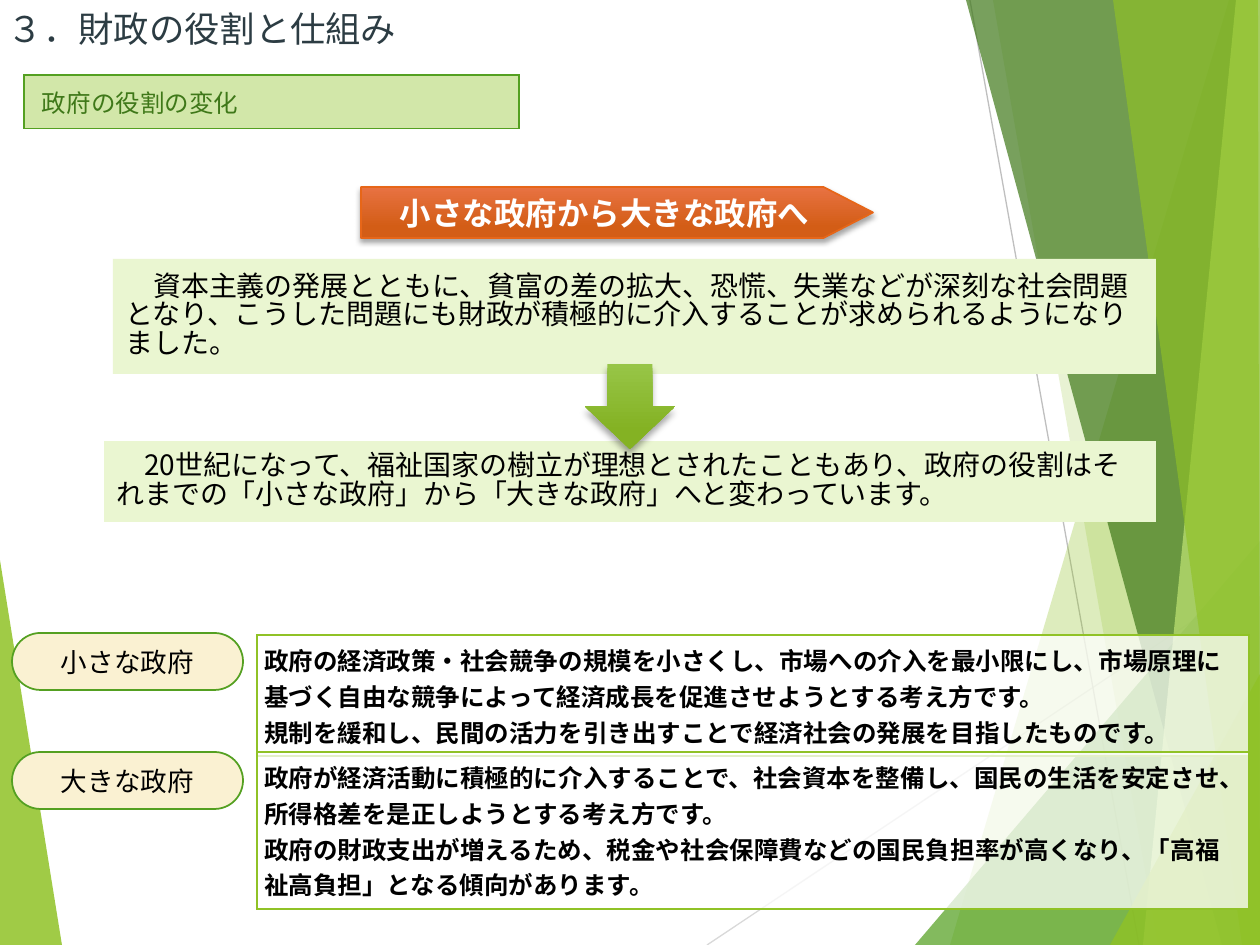
from dataclasses import dataclass
from typing import Optional

from lxml import etree
from pptx import Presentation
from pptx.dml.color import RGBColor
from pptx.enum.shapes import MSO_CONNECTOR, MSO_SHAPE
from pptx.enum.text import MSO_ANCHOR, PP_ALIGN
from pptx.oxml.ns import qn
from pptx.util import Emu, Pt

EMU_PER_PX = 914400 / 126
WIDTH, HEIGHT = 1260, 945
FONT = "Noto Sans CJK JP"
LEFT, CENTER = PP_ALIGN.LEFT, PP_ALIGN.CENTER
TOP, MIDDLE = MSO_ANCHOR.TOP, MSO_ANCHOR.MIDDLE
RECT, PILL = MSO_SHAPE.RECTANGLE, MSO_SHAPE.ROUNDED_RECTANGLE
PENTAGON, DOWN_ARROW = MSO_SHAPE.PENTAGON, MSO_SHAPE.DOWN_ARROW
STRAIGHT = MSO_CONNECTOR.STRAIGHT

COLORS = {
    "black": "000000", "white": "FFFFFF", "title": "2C3C43",
    "lime": "90C226", "green": "54A021", "forest": "3F7819", "pale_lime": "C0E474",
    "heading": "D2E7A9", "panel": "EAF6D1", "cream": "FAF1D2",
    "orange": "E76618", "orange_top": "E87242", "orange_bottom": "D35D16",
    "arrow_top": "97C547", "arrow_bottom": "84B223",
    "grey": "BFBFBF", "light_grey": "D9D9D9",
}


@dataclass(frozen=True)
class Facet:
    points: tuple[tuple[int, int], ...]
    color: str
    opacity: int


@dataclass(frozen=True)
class Ray:
    start: tuple[int, int]
    end: tuple[int, int]
    color: str


@dataclass(frozen=True)
class TextStyle:
    size: float
    color: str = "black"
    bold: bool = False
    align: PP_ALIGN = LEFT
    spacing: Optional[float] = None


@dataclass(frozen=True)
class Box:
    kind: MSO_SHAPE
    area: tuple[int, int, int, int]
    fill: tuple[str, ...]  # two colours make a vertical gradient
    text: str = ""
    style: TextStyle = TextStyle(16)
    line: Optional[str] = None
    adjust: Optional[float] = None
    shadow: Optional[tuple[int, int]] = None  # blur and distance in points


@dataclass(frozen=True)
class Frame:
    area: tuple[int, int, int, int]
    paragraphs: tuple[str, ...]
    style: TextStyle
    fill: str
    border: str
    margins: tuple[int, int]  # horizontal, vertical
    anchor: MSO_ANCHOR
    opacity: int = 100


BOTTOM_RIGHT, TOP_RIGHT = (WIDTH, HEIGHT), (WIDTH, 0)
FACETS_BEHIND = [Facet(((0, 560), (62, HEIGHT), (0, HEIGHT)), "lime", 85)]
RAYS = [
    Ray((707, HEIGHT), (WIDTH, 576), "light_grey"),
    Ray((970, 0), (1139, HEIGHT), "grey"),
]
FACETS = [
    Facet(((1229, 0), (950, HEIGHT), BOTTOM_RIGHT, TOP_RIGHT), "lime", 30),
    Facet(((993, 0), (1158, HEIGHT), BOTTOM_RIGHT, TOP_RIGHT), "lime", 20),
    Facet(((915, HEIGHT), (WIDTH, 541), BOTTOM_RIGHT), "green", 72),
    Facet(((966, 0), (1222, HEIGHT), BOTTOM_RIGHT, TOP_RIGHT), "forest", 70),
    Facet(((1236, 0), (1143, HEIGHT), BOTTOM_RIGHT, TOP_RIGHT), "pale_lime", 70),
    Facet(((1113, 0), (1242, HEIGHT), BOTTOM_RIGHT, (1258, 0)), "lime", 65),
    Facet(((1110, HEIGHT), (WIDTH, 674), BOTTOM_RIGHT), "lime", 80),
]

TITLE = TextStyle(20.2, "title")
BODY = TextStyle(16, spacing=0.84)
TERM = TextStyle(15.2, align=CENTER)
DEFINITION = TextStyle(14, bold=True)
FRAMES = [
    Frame((24, 75, 495, 50), ("政府の役割の変化",), TextStyle(14, "forest"),
          "heading", "green", (18, 9), TOP),
    Frame((257, 635, 992, 110), (
        "政府の経済政策・社会競争の規模を小さくし、市場への介入を最小限にし、市場原理に基づく自由な競争によって経済成長を促進させようとする考え方です。",
        "規制を緩和し、民間の活力を引き出すことで経済社会の発展を目指したものです。",
    ), DEFINITION, "white", "lime", (7, 7), MIDDLE, 75),
    Frame((257, 752, 992, 141), (
        "政府が経済活動に積極的に介入することで、社会資本を整備し、国民の生活を安定させ、所得格差を是正しようとする考え方です。",
        "政府の財政支出が増えるため、税金や社会保障費などの国民負担率が高くなり、「高福祉高負担」となる傾向があります。",
    ), DEFINITION, "white", "lime", (7, 7), MIDDLE, 75),
]
BOXES = [
    Box(PILL, (12, 633, 231, 57), ("cream",), "小さな政府", TERM, "green", 0.5),
    Box(PILL, (12, 752, 231, 57), ("cream",), "大きな政府", TERM, "green", 0.5),
    Box(RECT, (104, 441, 1052, 81), ("panel",),
        "　20世紀になって、福祉国家の樹立が理想とされたこともあり、政府の役割はそれまでの「小さな政府」から「大きな政府」へと変わっています。", BODY),
    Box(PENTAGON, (361, 187, 512, 51), ("orange_top", "orange_bottom"),
        "小さな政府から大きな政府へ", TextStyle(18, "white", True, CENTER),
        "orange", 0.97, (3, 2)),
    Box(RECT, (113, 259, 1043, 115), ("panel",),
        "　資本主義の発展とともに、貧富の差の拡大、恐慌、失業などが深刻な社会問題となり、こうした問題にも財政が積極的に介入することが求められるようになりました。", BODY),
    Box(DOWN_ARROW, (585, 364, 90, 85), ("arrow_top", "arrow_bottom"), shadow=(4, 3)),
]


def px(length: int) -> Emu:
    return Emu(round(length * EMU_PER_PX))


def rgb(name: str) -> RGBColor:
    return RGBColor.from_string(COLORS[name])


def fill_solid(fill, element, color: str, opacity: int = 100) -> None:
    fill.solid()
    fill.fore_color.rgb = rgb(color)
    if opacity < 100:
        swatch = element.find(".//" + qn("a:srgbClr"))
        etree.SubElement(swatch, qn("a:alpha"), val=str(opacity * 1000))


def write(text_frame, paragraphs: tuple[str, ...], style: TextStyle) -> None:
    text_frame.word_wrap = True
    for index, text in enumerate(paragraphs):
        paragraph = text_frame.add_paragraph() if index else text_frame.paragraphs[0]
        paragraph.alignment = style.align
        if style.spacing:
            paragraph.line_spacing = style.spacing
        run = paragraph.add_run()
        run.text = text
        run.font.size, run.font.bold, run.font.name = Pt(style.size), style.bold, FONT
        run.font.color.rgb = rgb(style.color)
        etree.SubElement(run.font._element, qn("a:ea"), typeface=FONT)


def draw_facet(shapes, facet: Facet) -> None:
    builder = shapes.build_freeform(*facet.points[0], scale=EMU_PER_PX)
    builder.add_line_segments(facet.points[1:], close=True)
    shape = builder.convert_to_shape()
    shape.shadow.inherit = False
    shape.line.fill.background()
    fill_solid(shape.fill, shape._element.spPr, facet.color, facet.opacity)


def draw_ray(shapes, ray: Ray) -> None:
    line = shapes.add_connector(STRAIGHT, *map(px, ray.start + ray.end))
    line.line.color.rgb = rgb(ray.color)
    line.line.width = Pt(0.75)
    etree.SubElement(line._element.spPr, qn("a:effectLst"))


def draw_frame(shapes, frame: Frame) -> None:
    """Draw a one-cell table with a border on all sides."""
    table = shapes.add_table(1, 1, *map(px, frame.area)).table
    table.first_row = table.horz_banding = False
    cell = table.cell(0, 0)
    cell.margin_left = cell.margin_right = px(frame.margins[0])
    cell.margin_top = cell.margin_bottom = px(frame.margins[1])
    cell.vertical_anchor = frame.anchor
    write(cell.text_frame, frame.paragraphs, frame.style)
    properties = cell._tc.get_or_add_tcPr()
    fill_solid(cell.fill, properties, frame.fill, frame.opacity)
    for index, side in enumerate("LRTB"):
        border = etree.Element(qn("a:ln" + side), w=str(Pt(1)))
        paint = etree.SubElement(border, qn("a:solidFill"))
        etree.SubElement(paint, qn("a:srgbClr"), val=COLORS[frame.border])
        properties.insert(index, border)


def add_shadow(shape, blur: int, distance: int) -> None:
    effects = shape._element.spPr.find(qn("a:effectLst"))
    shadow = etree.SubElement(effects, qn("a:outerShdw"), blurRad=str(Pt(blur)),
                              dist=str(Pt(distance)), dir="5400000", rotWithShape="0")
    swatch = etree.SubElement(shadow, qn("a:srgbClr"), val=COLORS["black"])
    etree.SubElement(swatch, qn("a:alpha"), val="35000")


def draw_box(shapes, box: Box) -> None:
    shape = shapes.add_shape(box.kind, *map(px, box.area))
    shape.shadow.inherit = False
    if box.adjust is not None:
        shape.adjustments[0] = box.adjust
    if len(box.fill) == 1:
        fill_solid(shape.fill, shape._element.spPr, box.fill[0])
    else:
        shape.fill.gradient()
        shape.fill.gradient_angle = 270
        for stop, color, position in zip(shape.fill.gradient_stops, box.fill, (0, 0.78)):
            stop.color.rgb, stop.position = rgb(color), position
    if box.line:
        shape.line.color.rgb, shape.line.width = rgb(box.line), Pt(1)
    else:
        shape.line.fill.background()
    if box.shadow:
        add_shadow(shape, *box.shadow)
    if box.text:
        shape.text_frame.vertical_anchor = MIDDLE
        write(shape.text_frame, (box.text,), box.style)


def draw_title(shapes) -> None:
    frame = shapes.add_textbox(*map(px, (0, 0, 504, 57))).text_frame
    frame.margin_left = px(8)
    frame.margin_right = frame.margin_top = frame.margin_bottom = 0
    frame.vertical_anchor = MIDDLE
    write(frame, ("３．財政の役割と仕組み",), TITLE)


def main() -> None:
    deck = Presentation()
    deck.slide_width, deck.slide_height = px(WIDTH), px(HEIGHT)
    shapes = deck.slides.add_slide(deck.slide_layouts[6]).shapes
    for draw, items in ((draw_facet, FACETS_BEHIND), (draw_ray, RAYS), (draw_facet, FACETS),
                        (draw_frame, FRAMES), (draw_box, BOXES)):
        for item in items:
            draw(shapes, item)
    draw_title(shapes)
    deck.save("out.pptx")


if __name__ == "__main__":
    main()
